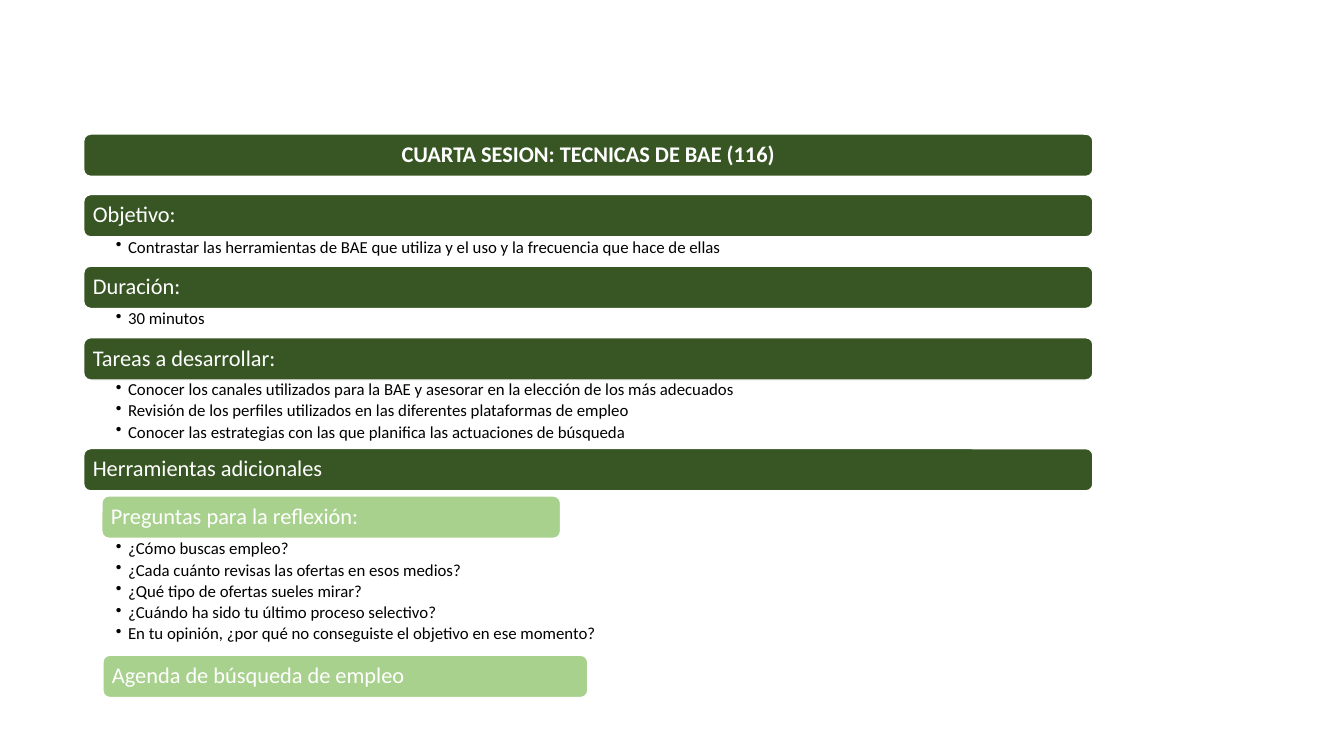
from dataclasses import dataclass

import pptx
import pptx.dml.color
import pptx.enum.shapes
import pptx.enum.text
import pptx.oxml
import pptx.oxml.ns
import pptx.shapes.autoshape
import pptx.slide
import pptx.text.text
import pptx.util

Inches = pptx.util.Inches
Pt = pptx.util.Pt
Align = pptx.enum.text.PP_ALIGN
Anchor = pptx.enum.text.MSO_ANCHOR


@dataclass(frozen=True)
class Theme:
    font: str = "Calibri"
    heading_size: float = 16
    bullet_size: float = 12
    dark_green: str = "385624"
    light_green: str = "A9D18E"
    white: str = "FFFFFF"
    black: str = "000000"


THEME = Theme()
LEFT, WIDTH, BAR_HEIGHT = 0.83, 10.01, 0.42


@dataclass(frozen=True)
class Bar:
    text: str
    top: float
    left: float = LEFT
    width: float = WIDTH
    fill: str = THEME.dark_green
    bold: bool = False
    alignment: Align = Align.LEFT


@dataclass(frozen=True)
class BulletList:
    items: tuple[str, ...]
    top: float
    height: float
    justified: tuple[int, ...] = ()


BARS = [
    Bar("CUARTA SESION: TECNICAS DE BAE (116)", 1.33, bold=True, alignment=Align.CENTER),
    Bar("Objetivo:", 1.93),
    Bar("Duración:", 2.64),
    Bar("Tareas a desarrollar:", 3.35),
    Bar("Herramientas adicionales", 4.45),
    Bar("Preguntas para la reflexión:", 4.92, 1.01, 4.55, THEME.light_green),
    Bar("Agenda de búsqueda de empleo", 6.5, 1.02, 4.81, THEME.light_green),
]

BULLET_LISTS = [
    BulletList(
        ("Contrastar las herramientas de BAE que utiliza y el uso y la frecuencia que hace de ellas",),
        2.35, 0.29,
    ),
    BulletList(("30 minutos",), 3.06, 0.29),
    BulletList(
        (
            "Conocer los canales utilizados para la BAE y asesorar en la elección de los más adecuados",
            "Revisión de los perfiles utilizados en las diferentes plataformas de empleo",
            "Conocer las estrategias con las que planifica las actuaciones de búsqueda",
        ),
        3.76, 0.69, justified=(0, 1, 2),
    ),
    BulletList(
        (
            "¿Cómo buscas empleo?",
            "¿Cada cuánto revisas las ofertas en esos medios?",
            "¿Qué tipo de ofertas sueles mirar?",
            "¿Cuándo ha sido tu último proceso selectivo?",
            "En tu opinión, ¿por qué no conseguiste el objetivo en ese momento?",
        ),
        5.34, 1.14, justified=(1,),
    ),
]


def color(value: str) -> pptx.dml.color.RGBColor:
    return pptx.dml.color.RGBColor.from_string(value)


def apply_format(target: object, values: dict[str, object]) -> None:
    for name, value in values.items():
        setattr(target, name, value)


def format_frame(
    frame: pptx.text.text.TextFrame,
    margins: tuple[float, float, float, float],
    anchor: Anchor,
) -> None:
    left, top, right, bottom = map(Inches, margins)
    apply_format(frame, {
        "word_wrap": True,
        "vertical_anchor": anchor,
        "margin_left": left,
        "margin_top": top,
        "margin_right": right,
        "margin_bottom": bottom,
    })


def format_font(paragraph: object, size: float, text_color: str, bold: bool = False) -> None:
    apply_format(paragraph.font, {"name": THEME.font, "size": Pt(size), "bold": bold})
    paragraph.font.color.rgb = color(text_color)


def add_bullet(paragraph: object) -> None:
    properties = paragraph._p.get_or_add_pPr()
    properties.set("marL", str(Inches(0.12)))
    properties.set("indent", str(Inches(-0.12)))
    properties.append(pptx.oxml.parse_xml(
        f'<a:buChar {pptx.oxml.ns.nsdecls("a")} char="•"/>'
    ))


def draw_bar(slide: pptx.slide.Slide, bar: Bar) -> pptx.shapes.autoshape.Shape:
    shape = slide.shapes.add_shape(
        pptx.enum.shapes.MSO_SHAPE.ROUNDED_RECTANGLE,
        Inches(bar.left), Inches(bar.top), Inches(bar.width), Inches(BAR_HEIGHT),
    )
    shape.shadow.inherit = False
    shape.fill.solid()
    shape.fill.fore_color.rgb = color(bar.fill)
    shape.line.color.rgb = color(THEME.white)
    shape.line.width = Pt(1)
    format_frame(shape.text_frame, (0.07, 0.07, 0.07, 0.07), Anchor.MIDDLE)
    paragraph = shape.text_frame.paragraphs[0]
    apply_format(paragraph, {"text": bar.text, "alignment": bar.alignment, "line_spacing": 0.9})
    format_font(paragraph, THEME.heading_size, THEME.white, bar.bold)
    return shape


def draw_bullets(slide: pptx.slide.Slide, bullets: BulletList) -> pptx.shapes.autoshape.Shape:
    shape = slide.shapes.add_textbox(
        Inches(LEFT), Inches(bullets.top), Inches(WIDTH), Inches(bullets.height)
    )
    frame = shape.text_frame
    format_frame(frame, (0.32, 0.02, 0.12, 0.02), Anchor.TOP)
    for index, item in enumerate(bullets.items):
        paragraph = frame.add_paragraph() if index else frame.paragraphs[0]
        add_bullet(paragraph)
        apply_format(paragraph, {
            "text": item,
            "level": 1,
            "alignment": Align.JUSTIFY if index in bullets.justified else Align.LEFT,
            "line_spacing": 0.9,
            "space_after": Pt(2.2),
        })
        format_font(paragraph, THEME.bullet_size, THEME.black)
    return shape


def main() -> None:
    presentation = pptx.Presentation()
    presentation.slide_width = Inches(13.33)
    presentation.slide_height = Inches(7.5)
    slide = presentation.slides.add_slide(presentation.slide_layouts[6])

    # Section headings
    for bar in BARS:
        draw_bar(slide, bar)

    # Details below the headings
    for bullets in BULLET_LISTS:
        draw_bullets(slide, bullets)

    presentation.save("out.pptx")


if __name__ == "__main__":
    main()
